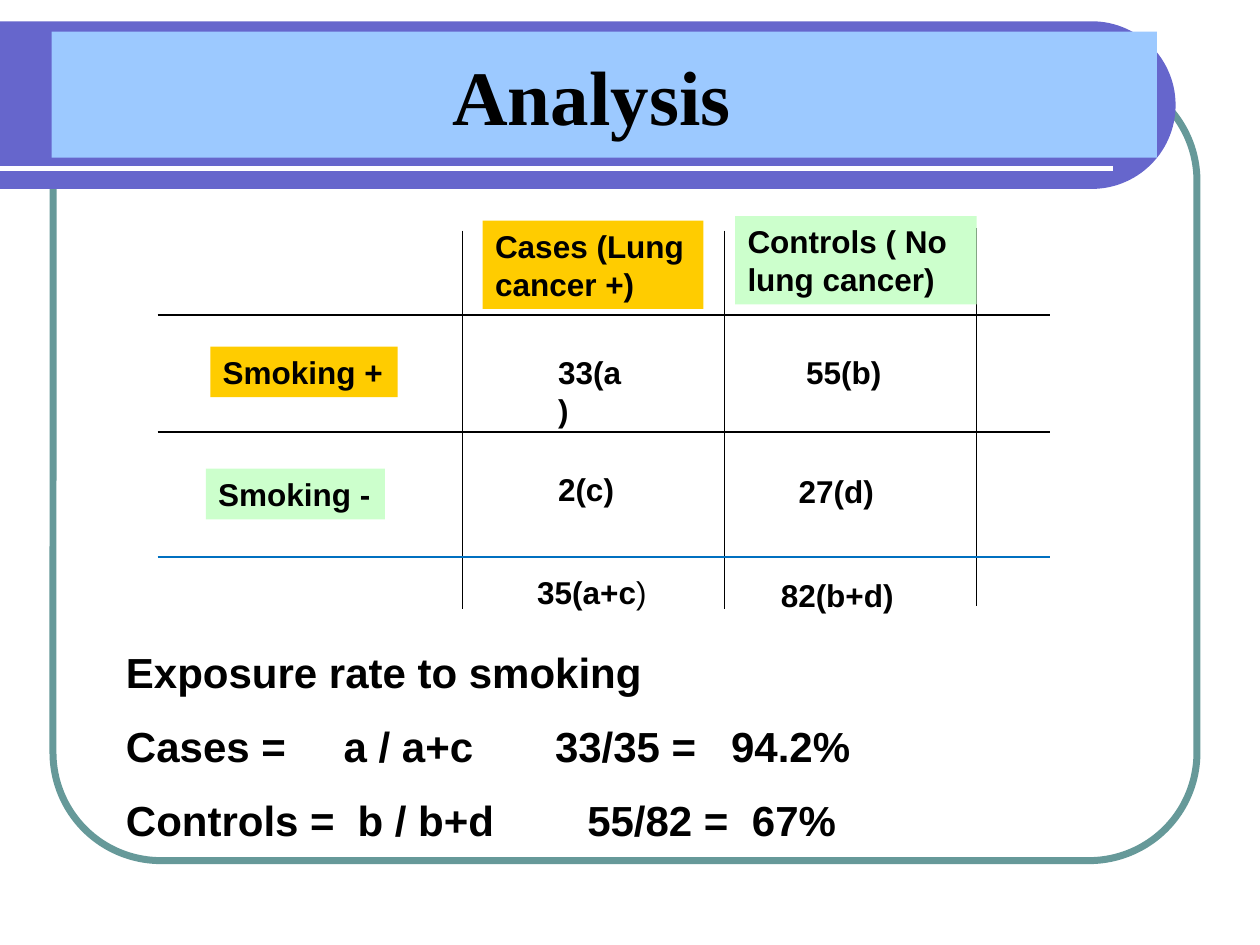
"""Build the case-control analysis slide with its two-by-two smoking table."""
import math

from lxml import etree
from pptx import Presentation
from pptx.dml.color import RGBColor
from pptx.enum import shapes, text
from pptx.oxml.ns import qn
from pptx.util import Cm, Pt

BLACK = RGBColor(0x00, 0x00, 0x00)
WHITE = RGBColor(0xFF, 0xFF, 0xFF)
TEAL = RGBColor(0x66, 0x99, 0x99)
PURPLE = RGBColor(0x66, 0x66, 0xCC)
SKY = RGBColor(0x9C, 0xC9, 0xFF)
AMBER = RGBColor(0xFF, 0xCC, 0x00)
MINT = RGBColor(0xCC, 0xFF, 0xCC)
BLUE = RGBColor(0x00, 0x70, 0xC0)

TITLE = "Analysis"
COLUMN_LINES = [(9.32, 4.65), (14.6, 4.65), (19.69, 4.6)]
COLUMN_HEIGHT = 7.62
ROW_LINES = [(6.35, BLACK), (8.71, BLACK), (11.23, BLUE)]
ROW_LEFT, ROW_RIGHT = 3.18, 21.16
LABELS = [
    ("Cases (Lung cancer +)", 9.73, 4.45, 4.45, 1.78, AMBER, True),
    ("Controls ( No lung cancer)", 14.82, 4.36, 4.87, 1.78, MINT, True),
    ("Smoking +", 4.24, 6.99, 3.78, 1.02, AMBER, False),
    ("Smoking -", 4.15, 9.45, 3.61, 1.02, MINT, False),
]
COUNTS = [
    (["33(a)"], 11, 6.99, 1.98),
    (["55(b)"], 16, 6.99, 2.06),
    (["2(c)"], 11, 9.35, 1.65),
    (["27(d)"], 15.85, 9.4, 2.06),
    (["35(a+c", ")"], 10.58, 11.43, 2.74),
    (["82(b+d)"], 15.49, 11.48, 2.82),
]
RATES = [
    ("Exposure rate to smoking", []),
    ("Cases =\ta / a+c\t33/35 =\t94.2%", [4.39, 8.65, 12.2]),
    ("Controls =\tb / b+d\t55/82 =\t67%", [4.67, 9.3, 12.62]),
]


def add_line(slide, start, end, color, width):
    line = slide.shapes.add_connector(
        shapes.MSO_CONNECTOR.STRAIGHT, *map(Cm, (*start, *end)))
    line.line.color.rgb = color
    line.line.width = Pt(width)
    etree.SubElement(line._element.spPr, qn("a:effectLst"))


def add_run(paragraph, wording, size, bold=True, font="Arial"):
    run = paragraph.add_run()
    run.text = wording
    run.font.name = font
    run.font.size = Pt(size)
    run.font.bold = bold
    run.font.color.rgb = BLACK


def add_label(slide, runs, left, top, width, height, fill=None, wrap=False):
    box = slide.shapes.add_textbox(*map(Cm, (left, top, width, height)))
    if fill is not None:
        box.fill.solid()
        box.fill.fore_color.rgb = fill
    frame = box.text_frame
    frame.word_wrap = wrap
    frame.auto_size = text.MSO_AUTO_SIZE.SHAPE_TO_FIT_TEXT
    for index, wording in enumerate(runs):
        add_run(frame.paragraphs[0], wording, 18, bold=index == 0)


def add_frame(slide):
    border = slide.shapes.add_shape(
        shapes.MSO_SHAPE.ROUNDED_RECTANGLE, *map(Cm, (1.07, 1.47, 23.06, 15.88)))
    border.adjustments[0] = 0.137
    border.shadow.inherit = False
    border.fill.background()
    border.line.color.rgb = TEAL
    border.line.width = Pt(4)

    center_x, center_y, radius = 22.01, 2.12, 1.69
    arc = [(center_x + radius * math.cos(math.radians(angle)),
            center_y + radius * math.sin(math.radians(angle)))
           for angle in range(-90, 91, 3)]
    outline = [*arc, (0, center_y + radius)]
    builder = slide.shapes.build_freeform(0, Cm(center_y - radius))
    builder.add_line_segments([(Cm(x), Cm(y)) for x, y in outline], close=True)
    banner = builder.convert_to_shape()
    banner.shadow.inherit = False
    banner.fill.solid()
    banner.fill.fore_color.rgb = PURPLE
    banner.line.fill.background()
    add_line(slide, (0, 3.39), (22.44, 3.39), WHITE, 3)


def add_title(slide):
    title = slide.shapes.title
    tree = title._element.getparent()
    tree.append(title._element)
    title.left, title.top, title.width, title.height = map(
        Cm, (1.04, 0.64, 22.28, 2.54))
    title.fill.solid()
    title.fill.fore_color.rgb = SKY
    frame = title.text_frame
    frame.margin_left = Cm(8.08)
    frame.vertical_anchor = text.MSO_ANCHOR.MIDDLE
    paragraph = frame.paragraphs[0]
    paragraph.alignment = text.PP_ALIGN.LEFT
    add_run(paragraph, TITLE, 44, font="Times New Roman")


def add_rates(slide):
    box = slide.shapes.add_textbox(*map(Cm, (2.29, 12.9, 19.05, 4.37)))
    frame = box.text_frame
    frame.word_wrap = True
    for index, (wording, stops) in enumerate(RATES):
        paragraph = frame.add_paragraph() if index else frame.paragraphs[0]
        if index:
            paragraph.space_before = Pt(13.5)
        if stops:
            tabs = etree.SubElement(
                paragraph._p.get_or_add_pPr(), qn("a:tabLst"))
            for stop in stops:
                etree.SubElement(
                    tabs, qn("a:tab"), pos=str(int(Cm(stop))), algn="l")
        add_run(paragraph, wording, 24)


def main():
    presentation = Presentation()
    presentation.slide_width, presentation.slide_height = Cm(25.4), Cm(19.05)
    slide = presentation.slides.add_slide(presentation.slide_layouts[5])
    add_frame(slide)
    add_title(slide)
    add_rates(slide)
    for x, top in COLUMN_LINES:
        add_line(slide, (x, top), (x, top + COLUMN_HEIGHT), BLACK, 0.75)
    for y, color in ROW_LINES:
        add_line(slide, (ROW_LEFT, y), (ROW_RIGHT, y), color, 0.75)
    for wording, left, top, width, height, fill, wrap in LABELS:
        add_label(slide, [wording], left, top, width, height, fill, wrap)
    for runs, left, top, width in COUNTS:
        add_label(slide, runs, left, top, width, 1.02)
    presentation.save("out.pptx")


if __name__ == "__main__":
    main()
